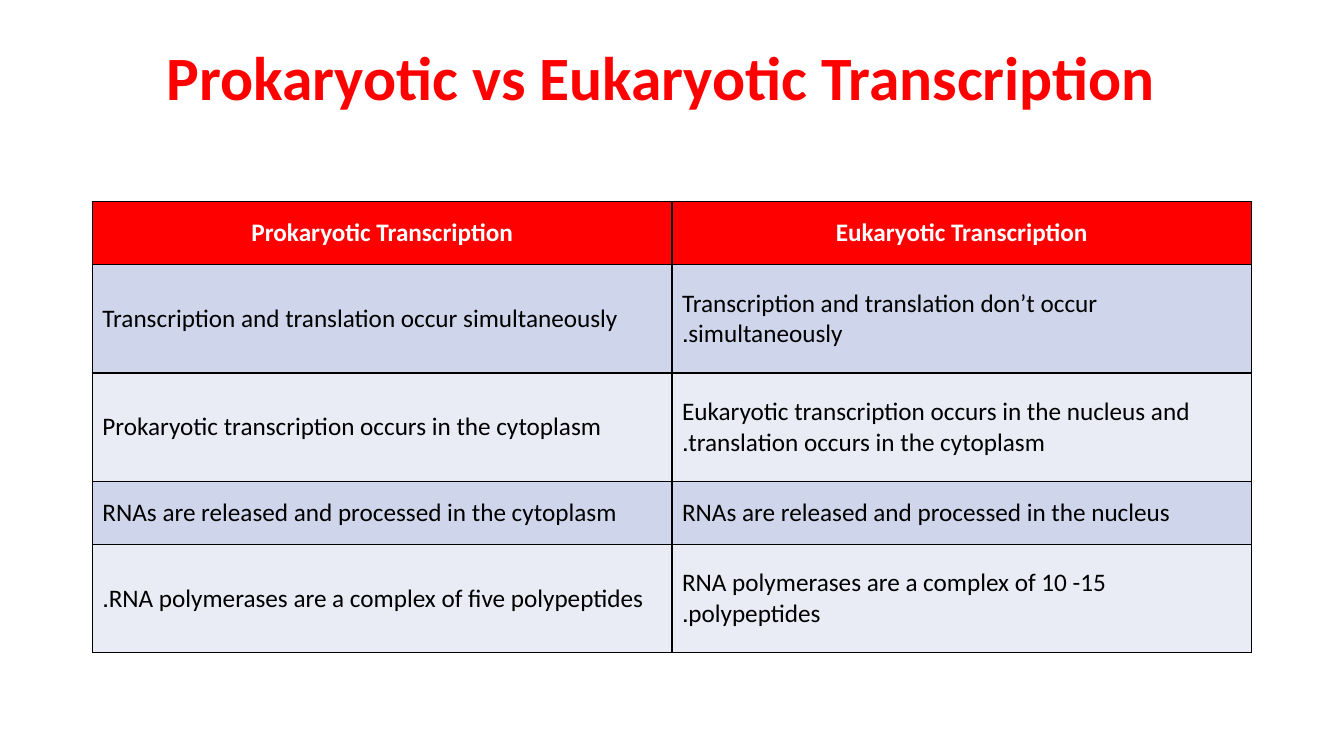
"""Build a slide comparing prokaryotic and eukaryotic transcription."""
from lxml import etree
from pptx import Presentation
from pptx.dml.color import RGBColor
from pptx.enum import text
from pptx.oxml import ns
from pptx.util import Pt

TITLE = "Prokaryotic vs Eukaryotic Transcription"
ROWS = [
    ("Prokaryotic Transcription", "Eukaryotic Transcription"),
    ("Transcription and translation occur simultaneously",
     "Transcription and translation don’t occur simultaneously."),
    ("Prokaryotic transcription occurs in the cytoplasm",
     "Eukaryotic transcription occurs in the nucleus and translation occurs in the cytoplasm."),
    ("RNAs are released and processed in the cytoplasm",
     "RNAs are released and processed in the nucleus"),
    ("RNA polymerases are a complex of five polypeptides.",
     "RNA polymerases are a complex of 10 -15 polypeptides."),
]
SHORT, TALL = 45, 77.4
HEIGHTS = [SHORT, TALL, TALL, SHORT, TALL]
COL_WIDTH = 414
COLORS = {"red": "FF0000", "white": "FFFFFF", "black": "000000",
          "band_dark": "CFD5EA", "band_light": "E9EBF5"}


def rgb(name):
    return RGBColor.from_string(COLORS[name])


def write(tf, content, size, color, bold, align):
    tf.text = content
    p = tf.paragraphs[0]
    p.alignment = align
    p._p.get_or_add_pPr().set("rtl", "1")
    font = p.runs[0].font
    font.name, font.size, font.bold = "Calibri", Pt(size), bold
    font.color.rgb = rgb(color)
    return p


def add_borders(cell):
    tc_pr = cell._tc.get_or_add_tcPr()
    for side in ("lnL", "lnR", "lnT", "lnB"):
        ln = etree.SubElement(tc_pr, ns.qn(f"a:{side}"), w=str(Pt(1)))
        fill = etree.SubElement(ln, ns.qn("a:solidFill"))
        etree.SubElement(fill, ns.qn("a:srgbClr"), val=COLORS["black"])


def add_title(s):
    sp = s.shapes.title
    sp.left, sp.top, sp.width, sp.height = Pt(58.5), Pt(30), Pt(828), Pt(104.4)
    tf = sp.text_frame
    p = write(tf, TITLE, 44, "red", True, text.PP_ALIGN.CENTER)
    p.line_spacing = 0.9
    tf.word_wrap = True
    tf.auto_size = text.MSO_AUTO_SIZE.NONE
    tf.vertical_anchor = text.MSO_ANCHOR.TOP


def add_comparison(s):
    cols = len(ROWS[0])
    table = s.shapes.add_table(len(ROWS), cols, Pt(66), Pt(144),
                               Pt(COL_WIDTH * cols), Pt(sum(HEIGHTS))).table
    for col in table.columns:
        col.width = Pt(COL_WIDTH)
    for i, (row, height) in enumerate(zip(ROWS, HEIGHTS)):
        table.rows[i].height = Pt(height)
        header = i == 0
        band = "red" if header else "band_dark" if i % 2 else "band_light"
        color = "white" if header else "black"
        align = text.PP_ALIGN.CENTER if header else text.PP_ALIGN.LEFT
        for j, content in enumerate(row):
            cell = table.cell(i, j)
            write(cell.text_frame, content, 18, color, header, align)
            cell.vertical_anchor = text.MSO_ANCHOR.MIDDLE
            add_borders(cell)
            cell.fill.solid()
            cell.fill.fore_color.rgb = rgb(band)


def main():
    prs = Presentation()
    prs.slide_width, prs.slide_height = Pt(960), Pt(540)
    s = prs.slides.add_slide(prs.slide_layouts[5])
    add_title(s)
    add_comparison(s)
    prs.save("out.pptx")


if __name__ == "__main__":
    main()
